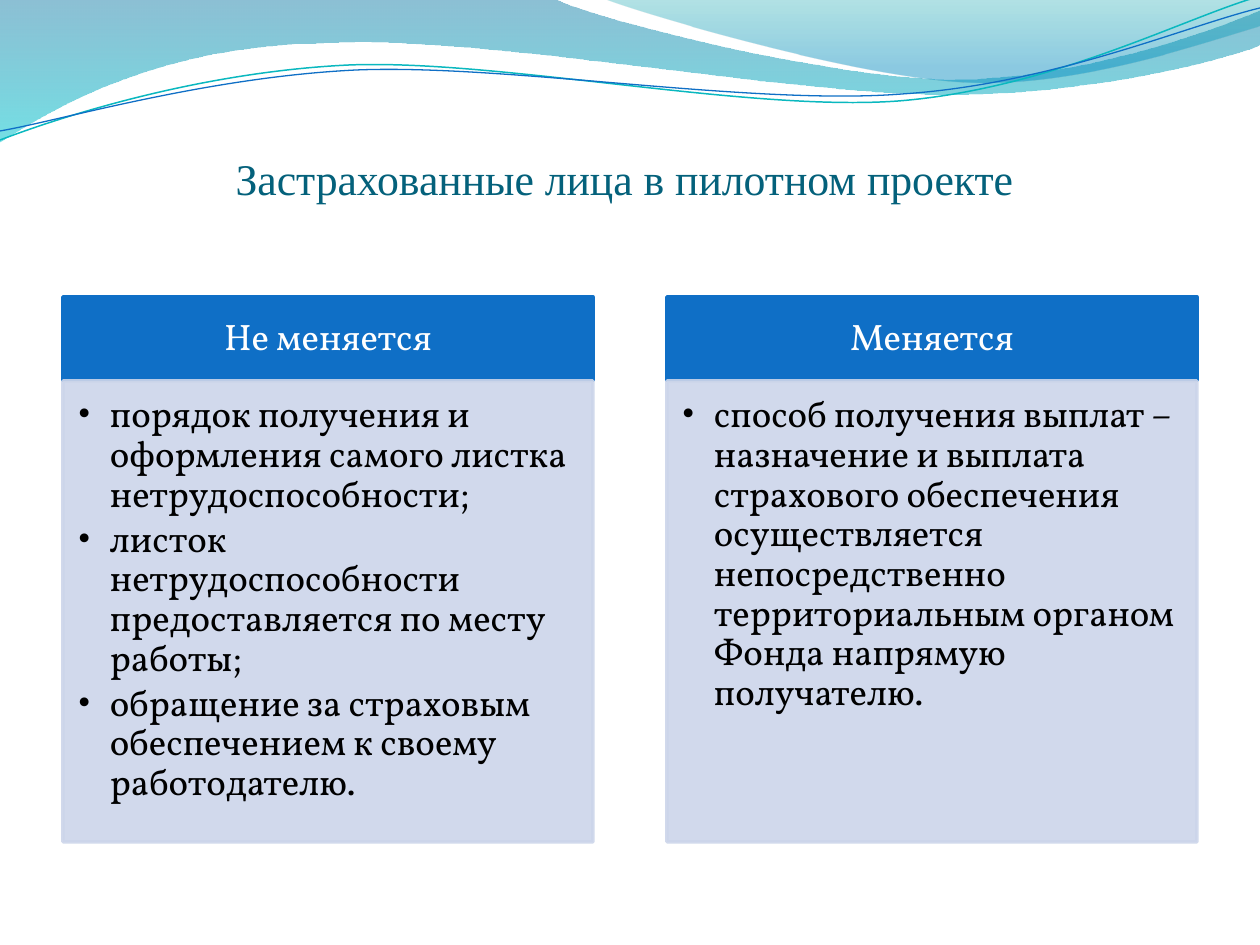
from dataclasses import dataclass
from typing import Optional

from lxml.etree import SubElement
from pptx import Presentation
from pptx.dml.color import RGBColor
from pptx.enum.shapes import MSO_SHAPE
from pptx.enum.text import MSO_ANCHOR as Anchor, PP_ALIGN as Align
from pptx.oxml.ns import qn
from pptx.util import Pt

EMU_PER_PX = 914400 / 126

BLUE = RGBColor(0x0F, 0x6F, 0xC6)
PALE_BLUE = RGBColor(0xCC, 0xD5, 0xEA)
TEAL = RGBColor(0x0A, 0xB8, 0xBF)
TITLE_TEAL = RGBColor(0x04, 0x61, 0x7B)
WHITE = RGBColor(0xFF, 0xFF, 0xFF)
BLACK = RGBColor(0x00, 0x00, 0x00)
DEEP_TEAL = RGBColor(0x00, 0x74, 0xA1)
AQUA = RGBColor(0x00, 0xC6, 0xCF)
SEA_GREEN = RGBColor(0x00, 0xA1, 0xA9)
SKY_BLUE = RGBColor(0x00, 0x8B, 0xBF)


@dataclass(frozen=True)
class GradientStop:
    position: float
    color: RGBColor
    opacity: int


@dataclass(frozen=True)
class Wave:
    """Two numbers in a segment are a point, six are a cubic curve."""
    start: tuple[int, int]
    segments: tuple[tuple[int, ...], ...]
    stops: tuple[GradientStop, ...] = ()
    line_color: Optional[RGBColor] = None
    line_width: float = 0


@dataclass(frozen=True)
class Column:
    heading: str
    items: tuple[str, ...]


WAVES = (
    Wave((0, 0),
         ((554, -1), (600, 21, 837, 79, 955, 79), (1075, 79, 1207, 33, 1260, 11),
          (1261, 45), (1239, 55, 1096, 96, 940, 94), (784, 94, 481, 35, 324, 43),
          (163, 45, 58, 105, -1, 142)),
         stops=(GradientStop(0, DEEP_TEAL, 45), GradientStop(1, AQUA, 55))),
    Wave((604, -1),
         ((641, 14, 859, 78, 969, 82), (1079, 87, 1211, 40, 1260, 26), (1260, 0)),
         stops=(GradientStop(0, SEA_GREEN, 30), GradientStop(0.8, SKY_BLUE, 45))),
    Wave((0, 140),
         ((60, 117, 199, 72, 349, 65), (498, 59, 747, 112, 898, 101),
          (1050, 89, 1182, 19, 1257, -3)),
         line_color=TEAL, line_width=0.85),
    Wave((0, 131),
         ((59, 121, 207, 77, 357, 70), (508, 64, 752, 106, 903, 94),
          (1053, 84, 1186, 26, 1260, 8)),
         line_color=BLUE, line_width=0.75),
)

COLUMNS = (
    Column("Не меняется", (
        "порядок получения и оформления самого листка нетрудоспособности;",
        "листок нетрудоспособности предоставляется по месту работы;",
        "обращение за страховым обеспечением к своему работодателю.",
    )),
    Column("Меняется", (
        "способ получения выплат – назначение и выплата страхового обеспечения "
        "осуществляется непосредственно территориальным органом Фонда "
        "напрямую получателю.",
    )),
)


def px(length: float) -> int:
    return round(length * EMU_PER_PX)


def set_opacity(shape, *percents: int) -> None:
    """Give the shape's colours, in XML order, their opacity."""
    for color, percent in zip(shape._element.spPr.iter(qn("a:srgbClr")), percents):
        SubElement(color, qn("a:alpha"), val=str(percent * 1000))


def bend_segments(shape, wave: Wave) -> None:
    """Turn the straight segments that have control points into curves."""
    lines = list(shape._element.spPr.iter(qn("a:lnTo")))
    for line, segment in zip(lines, wave.segments):
        if len(segment) == 6:
            line.tag = qn("a:cubicBezTo")
            controls = zip(segment[0:4:2], segment[1:4:2])
            for index, (x, y) in enumerate(controls):
                point = SubElement(line, qn("a:pt"), x=str(px(x) - shape.left),
                                   y=str(px(y) - shape.top))
                line.insert(index, point)


def draw_wave(slide, wave: Wave) -> None:
    builder = slide.shapes.build_freeform(px(wave.start[0]), px(wave.start[1]))
    builder.add_line_segments([(px(segment[-2]), px(segment[-1]))
                               for segment in wave.segments], close=bool(wave.stops))
    shape = builder.convert_to_shape()
    bend_segments(shape, wave)
    shape.shadow.inherit = False
    if wave.stops:
        shape.line.fill.background()
        shape.fill.gradient()
        shape.fill.gradient_angle = 270
        for target, stop in zip(shape.fill.gradient_stops, wave.stops):
            target.position = stop.position
            target.color.rgb = stop.color
        set_opacity(shape, *(stop.opacity for stop in wave.stops))
    else:
        shape.fill.background()
        shape.line.color.rgb = wave.line_color
        shape.line.width = Pt(wave.line_width)


def write_text(shape, *texts: str, font: str, size: int, color: RGBColor,
               insets: tuple[int, int, int, int], anchor=Anchor.TOP, align=Align.LEFT,
               line_spacing: float = 1.0, space_after: int = 0,
               bullet_indent: int = 0) -> None:
    frame = shape.text_frame
    frame.word_wrap = True
    frame.vertical_anchor = anchor
    (frame.margin_left, frame.margin_top,
     frame.margin_right, frame.margin_bottom) = map(px, insets)
    for index, text in enumerate(texts):
        paragraph = frame.add_paragraph() if index else frame.paragraphs[0]
        paragraph.alignment = align
        paragraph.line_spacing = line_spacing
        paragraph.space_after = Pt(space_after)
        run = paragraph.add_run()
        run.text = text
        run.font.name = font
        run.font.size = Pt(size)
        run.font.color.rgb = color
        if bullet_indent:
            paragraph.level = 1
            properties = paragraph._p.get_or_add_pPr()
            properties.set("marL", str(px(bullet_indent)))
            properties.set("indent", str(-px(bullet_indent)))
            SubElement(properties, qn("a:buFont"), typeface="Times New Roman")
            SubElement(properties, qn("a:buChar"), char="•")


def add_panel(slide, left: int, top: int, width: int, height: int, color: RGBColor):
    shape = slide.shapes.add_shape(MSO_SHAPE.RECTANGLE, px(left), px(top),
                                   px(width), px(height))
    shape.shadow.inherit = False
    shape.fill.solid()
    shape.fill.fore_color.rgb = color
    shape.line.color.rgb = color
    shape.line.width = Pt(2)
    return shape


def draw_column(slide, column: Column, left: int) -> None:
    header = add_panel(slide, left, 297, 530, 83, BLUE)
    write_text(header, column.heading, font="Vollkorn", size=21, color=WHITE,
               insets=(20, 11, 20, 11), anchor=Anchor.MIDDLE, align=Align.CENTER,
               line_spacing=0.9)
    body = add_panel(slide, left, 381, 530, 461, PALE_BLUE)
    set_opacity(body, 90, 90)
    write_text(body, *column.items, font="Vollkorn", size=21, color=BLACK,
               insets=(15, 15, 20, 23), line_spacing=0.9, space_after=3,
               bullet_indent=32)


def main() -> None:
    presentation = Presentation()
    presentation.slide_width, presentation.slide_height = px(1260), px(945)
    slide = presentation.slides.add_slide(presentation.slide_layouts[6])

    # Wave decoration along the top
    for wave in WAVES:
        draw_wave(slide, wave)

    # Title
    title = slide.shapes.add_textbox(px(63), px(97), px(1134), px(157))
    write_text(title, "Застрахованные лица в пилотном проекте", font="Times New Roman",
               size=25, color=TITLE_TEAL, insets=(0, 6, 11, 53),
               anchor=Anchor.BOTTOM, align=Align.CENTER)

    # Two columns of what stays and what changes
    for index, column in enumerate(COLUMNS):
        draw_column(slide, column, 63 + index * 604)

    presentation.save("out.pptx")


if __name__ == "__main__":
    main()
